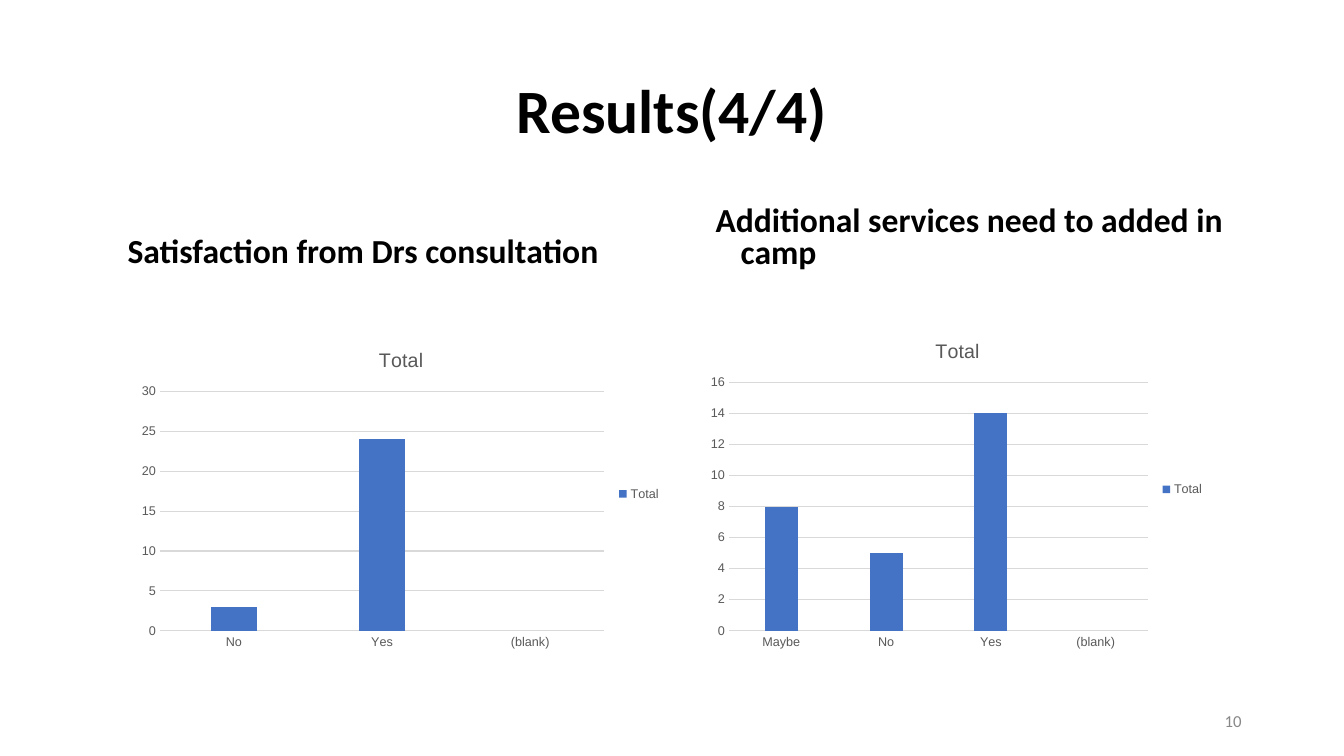
from pptx import Presentation
from pptx import util as u
from pptx.chart import data as chart_data
from pptx.dml import color
from pptx.enum import chart as charts, text


def rgb(value):
    return color.RGBColor.from_string(value)


class SlideBuilder:
    text_font = "Calibri"
    chart_font = "Arial"
    black = "000000"
    label_gray = "595959"
    line_gray = "D9D9D9"
    number_gray = "888888"
    bar_blue = "4472C4"

    def __init__(self, deck):
        self.slide = deck.slides.add_slide(deck.slide_layouts[5])

    def style_font(self, font, name, size, shade, bold=False):
        font.name = name
        font.size = u.Pt(size)
        font.color.rgb = rgb(shade)
        font.bold = bold

    def place(self, box, bounds):
        box.left, box.top, box.width, box.height = map(u.Pt, bounds)

    def fill_text(self, box, words, size, shade, align, anchor, bold):
        frame = box.text_frame
        frame.text = words
        frame.word_wrap = True
        frame.auto_size = text.MSO_AUTO_SIZE.NONE
        frame.vertical_anchor = anchor
        frame.margin_left = frame.margin_right = u.Pt(7.2)
        frame.margin_top = frame.margin_bottom = u.Pt(3.6)
        para = frame.paragraphs[0]
        para.alignment = align
        for span in para.runs:
            self.style_font(span.font, self.text_font, size, shade, bold)
        return para

    def title(self, words, bounds):
        box = self.slide.shapes.title
        self.place(box, bounds)
        para = self.fill_text(box, words, 44, self.black, text.PP_ALIGN.CENTER,
                              text.MSO_ANCHOR.MIDDLE, True)
        para.line_spacing = 0.9

    def text_box(self, words, bounds, size, shade, align, anchor, bold=False):
        box = self.slide.shapes.add_textbox(*map(u.Pt, bounds))
        return self.fill_text(box, words, size, shade, align, anchor, bold)

    def heading(self, words, bounds, line_spacing):
        para = self.text_box(words, bounds, 24, self.black, text.PP_ALIGN.LEFT,
                             text.MSO_ANCHOR.BOTTOM, True)
        para.line_spacing = line_spacing
        para.space_before = u.Pt(10)
        properties = para._p.get_or_add_pPr()
        properties.set("marL", str(u.Pt(36)))
        properties.set("indent", str(u.Pt(-18)))

    def page_number(self, number, bounds):
        self.text_box(number, bounds, 12, self.number_gray,
                      text.PP_ALIGN.RIGHT, text.MSO_ANCHOR.MIDDLE)

    def style_line(self, line):
        line.color.rgb = rgb(self.line_gray)
        line.width = u.Pt(0.75)

    def column_chart(self, bounds, answers, top_value, step):
        data = chart_data.CategoryChartData()
        data.categories = list(answers)
        data.add_series("Total", list(answers.values()))
        chart = self.slide.shapes.add_chart(
            charts.XL_CHART_TYPE.COLUMN_CLUSTERED, *map(u.Pt, bounds), data).chart
        self.style_font(chart.font, self.chart_font, 10, self.black)

        chart.has_title = True
        caption = chart.chart_title.text_frame
        caption.text = "Total"
        self.style_font(caption.paragraphs[0].runs[0].font,
                        self.chart_font, 14, self.label_gray)
        chart.chart_title.include_in_layout = False

        chart.has_legend = True
        chart.legend.position = charts.XL_LEGEND_POSITION.RIGHT
        chart.legend.include_in_layout = False
        for part in (chart.legend.font, chart.category_axis.tick_labels.font,
                     chart.value_axis.tick_labels.font):
            self.style_font(part, self.chart_font, 9, self.label_gray)

        for axis in (chart.category_axis, chart.value_axis):
            axis.major_tick_mark = charts.XL_TICK_MARK.NONE
            axis.minor_tick_mark = charts.XL_TICK_MARK.NONE
        self.style_line(chart.category_axis.format.line)
        values = chart.value_axis
        values.format.line.fill.background()
        values.has_major_gridlines = True
        self.style_line(values.major_gridlines.format.line)
        values.minimum_scale = 0
        values.maximum_scale = top_value
        values.major_unit = step

        plot = chart.plots[0]
        plot.gap_width = 219
        plot.overlap = -27
        plot.vary_by_categories = False
        bars = plot.series[0]
        bars.invert_if_negative = False
        bars.format.fill.solid()
        bars.format.fill.fore_color.rgb = rgb(self.bar_blue)


def main():
    deck = Presentation()
    deck.slide_width, deck.slide_height = u.Pt(960), u.Pt(540)
    page = SlideBuilder(deck)
    page.title("Results(4/4)", (66, 28.8, 828, 104.4))
    page.heading("Satisfaction from Drs consultation", (66, 132.5, 406, 64.8), 0.9)
    page.heading("Additional services need to added in camp",
                 (486, 132.5, 408, 64.8), 0.8)
    page.page_number("10", (678, 500.5, 216, 28.8))
    page.column_chart((93.6, 236.9, 385.9, 231.8),
                      {"No": 3, "Yes": 24, "(blank)": None}, 30, 5)
    page.column_chart((500.4, 230.4, 367.2, 238.3),
                      {"Maybe": 8, "No": 5, "Yes": 14, "(blank)": None}, 16, 2)
    deck.save("out.pptx")


if __name__ == "__main__":
    main()
